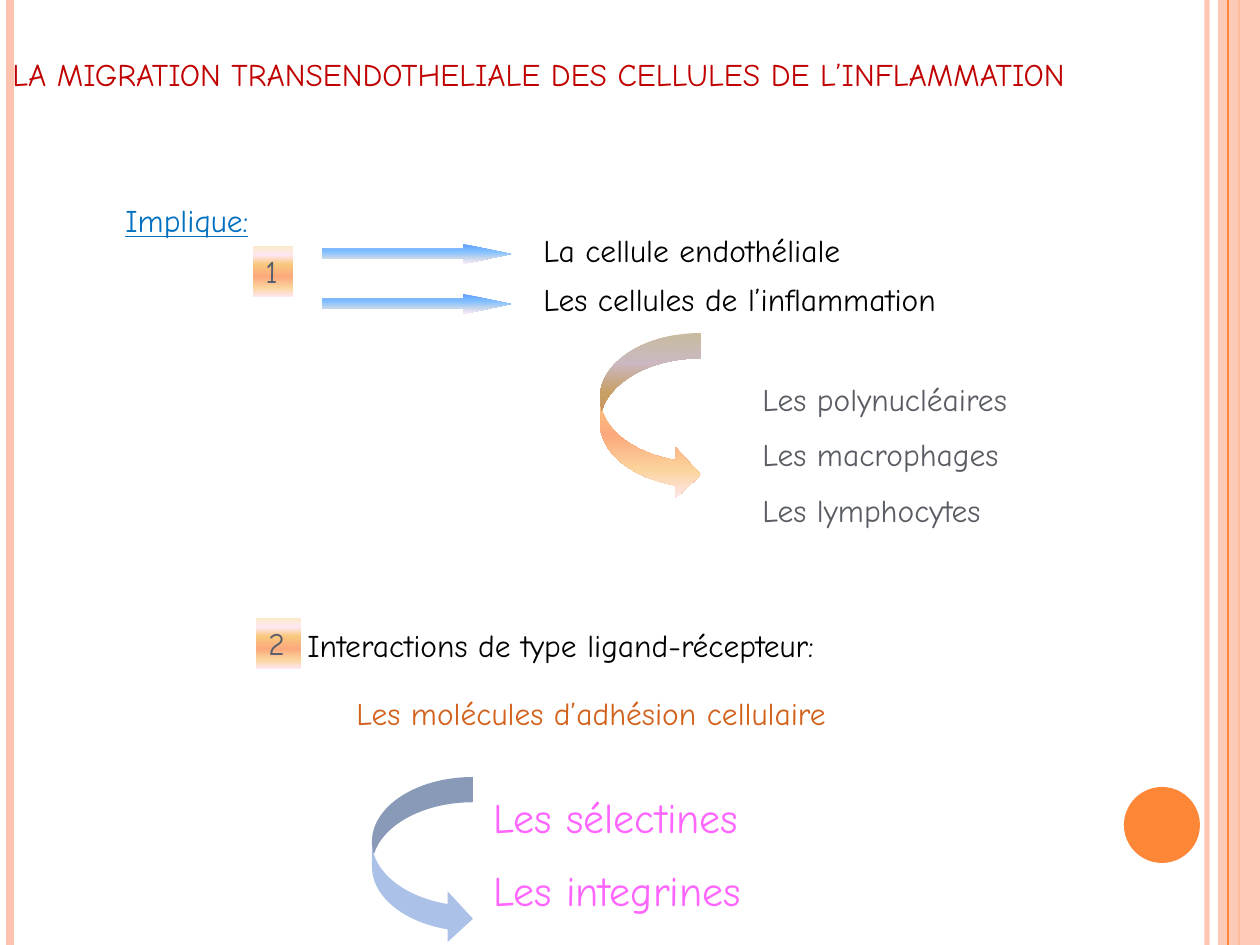
from lxml import etree
from pptx import Presentation
from pptx.dml.color import RGBColor
from pptx.enum.shapes import MSO_CONNECTOR, MSO_SHAPE
from pptx.enum.text import MSO_ANCHOR, PP_ALIGN
from pptx.oxml.ns import qn
from pptx.util import Emu, Pt

STRAIGHT = MSO_CONNECTOR.STRAIGHT
RECTANGLE = MSO_SHAPE.RECTANGLE
OVAL = MSO_SHAPE.OVAL
RIGHT_ARROW = MSO_SHAPE.RIGHT_ARROW
CURVED_ARROW = MSO_SHAPE.CURVED_RIGHT_ARROW
TOP = MSO_ANCHOR.TOP
LEFT = PP_ALIGN.LEFT

PEACH = RGBColor(0xFE, 0xC3, 0xAE)
ORANGE = RGBColor(0xFE, 0x86, 0x37)
RED = RGBColor(0xC0, 0x00, 0x00)
BLUE = RGBColor(0x00, 0x70, 0xC0)
BLACK = RGBColor(0x00, 0x00, 0x00)
GREY = RGBColor(0x59, 0x5D, 0x63)
SLATE = RGBColor(0x57, 0x5F, 0x6D)
RUST = RGBColor(0xD2, 0x61, 0x1C)
PINK = RGBColor(0xFF, 0x66, 0xFF)
PERIWINKLE = RGBColor(0xAC, 0xC1, 0xE8)

SKY_STOPS = [(0, "5E9EFF"), (40, "85C2FF"), (70, "C4D6EB"), (100, "FFEBFA")]
SUNSET_STOPS = [(0, "FBEAC7"), (18, "FEE7F2"), (36, "FAC77D"),
                (61, "FBA97D"), (82, "FBD49C"), (100, "FEE7F2")]

PAGE_WIDTH, PAGE_HEIGHT = 1260, 945


def px(length):
    return Emu(round(length * 914400 / 126))


class SlideBuilder:
    font_name = "Comic Neue"
    font_size = 18

    def __init__(self, page):
        self.page = page

    def set_opacity(self, element, percent):
        color = next(element.iter(qn("a:srgbClr")))
        etree.SubElement(color, qn("a:alpha"), val=str(percent * 1000))

    def vertical_line(self, x, color, width, opacity=100):
        line = self.page.shapes.add_connector(
            STRAIGHT, px(x), 0, px(x), px(PAGE_HEIGHT))
        line.line.color.rgb = color
        line.line.width = Pt(width)
        properties = line._element.spPr
        if opacity < 100:
            self.set_opacity(properties, opacity)
        etree.SubElement(properties, qn("a:effectLst"))

    def shape(self, kind, left, top, width, height, fill, opacity=100):
        shape = self.page.shapes.add_shape(
            kind, px(left), px(top), px(width), px(height))
        shape.shadow.inherit = False
        shape.line.fill.background()
        if isinstance(fill, list):
            self.apply_gradient(shape, fill)
        else:
            shape.fill.solid()
            shape.fill.fore_color.rgb = fill
        if opacity < 100:
            self.set_opacity(shape._element.spPr, opacity)
        return shape

    def apply_gradient(self, shape, stops):
        shape.fill.gradient()
        shape.fill.gradient_angle = 270
        stop_list = next(shape._element.spPr.iter(qn("a:gsLst")))
        for stop in list(stop_list):
            stop_list.remove(stop)
        for position, color in stops:
            stop = etree.SubElement(stop_list, qn("a:gs"), pos=str(position * 1000))
            etree.SubElement(stop, qn("a:srgbClr"), val=color)

    def fill_frame(self, frame, lines, color, size, gap=0, underline=False):
        frame.vertical_anchor = TOP
        for index, line in enumerate(lines):
            para = frame.paragraphs[0] if index == 0 else frame.add_paragraph()
            para.text = line
            para.alignment = LEFT
            if index:
                para.space_before = Pt(gap)
            para.font.name = self.font_name
            para.font.size = Pt(size)
            para.font.color.rgb = color
            if underline:
                para.font.underline = True

    def text(self, left, top, width, height, lines, color,
             size=font_size, gap=0, underline=False):
        box = self.page.shapes.add_textbox(
            px(left), px(top), px(width), px(height))
        box.text_frame.word_wrap = True
        self.fill_frame(box.text_frame, lines, color, size, gap, underline)

    def number(self, left, top, width, label):
        badge = self.shape(RECTANGLE, left, top, width, 51, SUNSET_STOPS)
        badge.text_frame.word_wrap = False
        self.fill_frame(badge.text_frame, [label], SLATE, self.font_size)

    def straight_arrow(self, top):
        arrow = self.shape(RIGHT_ARROW, 322, top, 189, 20, SKY_STOPS)
        arrow.adjustments[0] = 0.5
        arrow.adjustments[1] = 2.39

    def curved_arrow(self, left, top, fill):
        self.shape(CURVED_ARROW, left, top, 101, 167, fill)


def main():
    deck = Presentation()
    deck.slide_width = px(PAGE_WIDTH)
    deck.slide_height = px(PAGE_HEIGHT)
    builder = SlideBuilder(deck.slides.add_slide(deck.slide_layouts[6]))

    builder.vertical_line(1207, PEACH, 3, opacity=93)
    builder.vertical_line(10, PEACH, 4.5)
    builder.vertical_line(1239, ORANGE, 1.5)
    builder.shape(RECTANGLE, 1218, 0, 42, PAGE_HEIGHT, PEACH, opacity=87)
    builder.vertical_line(1228, ORANGE, 0.75)
    builder.shape(OVAL, 1124, 787, 76, 76, ORANGE)

    builder.text(0, 49, 1260, 50, [
        "LA MIGRATION TRANSENDOTHELIALE DES CELLULES DE L’INFLAMMATION"], RED)

    builder.text(113, 195, 218, 50, ["Implique:"], BLUE, underline=True)
    builder.number(253, 246, 40, "1")
    cells = ["La cellule endothéliale", "Les cellules de l’inflammation"]
    for index, cell in enumerate(cells):
        builder.straight_arrow(244 + 50 * index)
        builder.text(531, 225 + 49 * index, 729, 50, [cell], BLACK)
    builder.curved_arrow(600, 333, SUNSET_STOPS)
    builder.text(750, 374, 450, 168, [
        "Les polynucléaires", "Les macrophages", "Les lymphocytes"], GREY, gap=10)

    builder.number(256, 618, 45, "2")
    builder.text(295, 620, 965, 50, ["Interactions de type ligand-récepteur:"], BLACK)
    builder.text(344, 688, 858, 50, ["Les molécules d’adhésion cellulaire"], RUST)
    builder.curved_arrow(372, 777, PERIWINKLE)
    builder.text(481, 785, 779, 140, [
        "Les sélectines", "Les integrines"], PINK, size=24, gap=13)

    deck.save("out.pptx")


if __name__ == "__main__":
    main()
